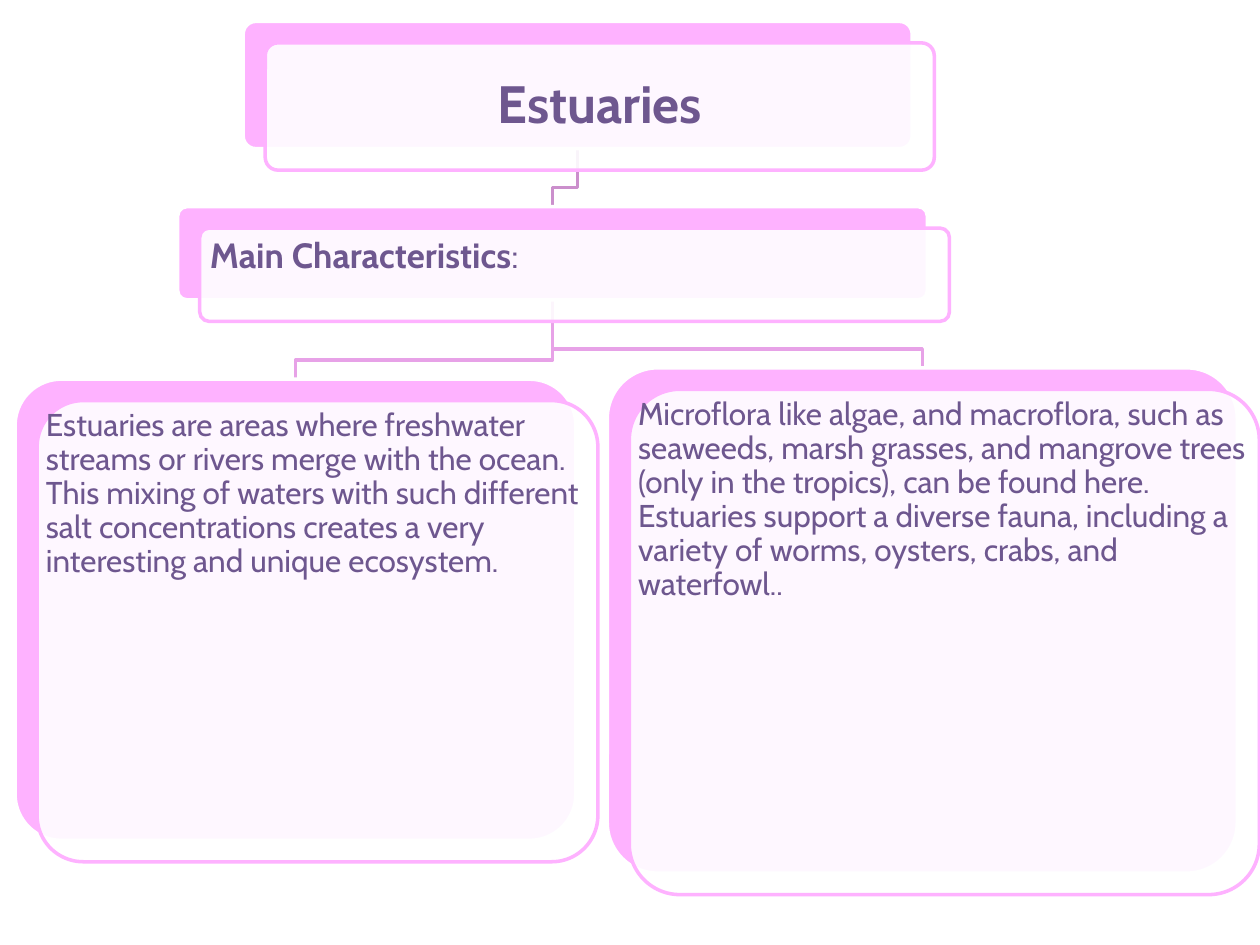
from pptx import Presentation, util as u
from pptx.dml.color import RGBColor
from pptx.enum import shapes as s, text as t
from pptx.oxml.ns import qn
from lxml import etree

deck = Presentation()
deck.slide_width, deck.slide_height = u.Inches(10), u.Inches(7.5)
W, H = deck.slide_width / 100, deck.slide_height / 100  # one percent of the slide
slide = deck.slides.add_slide(deck.slide_layouts[3])  # title and two bodies
title, left, right = slide.placeholders
items = slide.shapes
PINK, WHITE, PLUM = "FEB2FF", "FFFFFF", "6E578F"
DX, DY, DROP = 1.75, 2.27, 2  # card offset and last leg of a link


def paint(fmt, hue, alpha=None):
    fmt.solid()
    fmt.fore_color.rgb = RGBColor.from_string(hue)
    if alpha:
        node = fmt._xPr.find(".//" + qn("a:srgbClr"))
        etree.SubElement(node, qn("a:alpha"), val=str(alpha * 1000))


def write(box, *runs, size=18, inset=0.07, align="LEFT", anchor="TOP"):
    frame = box.text_frame
    frame.word_wrap = True
    frame.auto_size = t.MSO_AUTO_SIZE.NONE
    frame.vertical_anchor = t.MSO_ANCHOR[anchor]
    for side in ("left", "right", "top", "bottom"):
        setattr(frame, "margin_" + side, u.Inches(inset))
    para = frame.paragraphs[0]
    props = para._p.get_or_add_pPr()
    props.set("marL", "0")
    props.set("indent", "0")
    etree.SubElement(props, qn("a:buNone"))
    para.alignment = t.PP_ALIGN[align]
    para.line_spacing, para.space_before = 0.9, u.Pt(0)
    for words, bold in runs:
        run = para.add_run()
        run.text = words
        run.font.name, run.font.size, run.font.bold = "Cabin", u.Pt(size), bold
        paint(run.font.fill, PLUM)


# Nodes: left, top, width, height in percent of the slide
root = (19.3, 2.27, 53.1, 13.47)
head = (14.1, 21.87, 59.5, 9.87)
west = (1.2, 40.13, 44.5, 48.8)
east = (48.2, 38.93, 50, 53.47)

# Links: from the foot of a parent to the top of a child
for parent, child, hue in ((head, east, "E7A2E7"), (head, west, "E7A2E7"),
                           (root, head, "CB8FCC")):
    start, end = parent[0] + parent[2] / 2, child[0] + child[2] / 2
    foot, top = parent[1] + parent[3], child[1]
    pen = items.build_freeform(int(start * W), int(foot * H))
    bends = ((start, top - DROP), (end, top - DROP), (end, top))
    pen.add_line_segments([(int(x * W), int(y * H)) for x, y in bends], close=False)
    link = pen.convert_to_shape()
    link.shadow.inherit = False
    link.fill.background()
    paint(link.line.fill, hue)
    link.line.width = u.Pt(2)

# Cards: a pink back, a translucent front and the text on top
label = items.add_textbox(0, 0, 0, 0)
for node, box in ((root, title), (head, label), (west, left), (east, right)):
    x, y, wide, high = node
    size = int(wide * W), int(high * H)
    front = int((x + DX) * W), int((y + DY) * H)
    for spot, fill, alpha, edge in (((int(x * W), int(y * H)), PINK, None, WHITE),
                                    (front, WHITE, 90, PINK)):
        card = items.add_shape(s.MSO_SHAPE.ROUNDED_RECTANGLE, *spot, *size)
        card.adjustments[0] = 0.1
        card.shadow.inherit = False
        paint(card.fill, fill, alpha)
        paint(card.line.fill, edge)
        card.line.width = u.Pt(2)
    box.left, box.top = front
    box.width, box.height = size
    items._spTree.append(box._element)  # bring to the front

# Text
write(title, ("Estuaries", True), size=30, inset=0.12, align="CENTER", anchor="MIDDLE")
write(label, ("Main Characteristics", True), (":", False), size=20, inset=0.08)
write(left, ("Estuaries are areas where freshwater streams or rivers merge with the "
             "ocean. This mixing of waters with such different salt concentrations "
             "creates a very interesting and unique ecosystem.", False))
write(right, ("Microflora like algae, and macroflora, such as seaweeds, marsh grasses, "
              "and mangrove trees (only in the tropics), can be found here. Estuaries "
              "support a diverse fauna, including a variety of worms, oysters, crabs, "
              "and waterfowl..", False))

deck.save("out.pptx")
